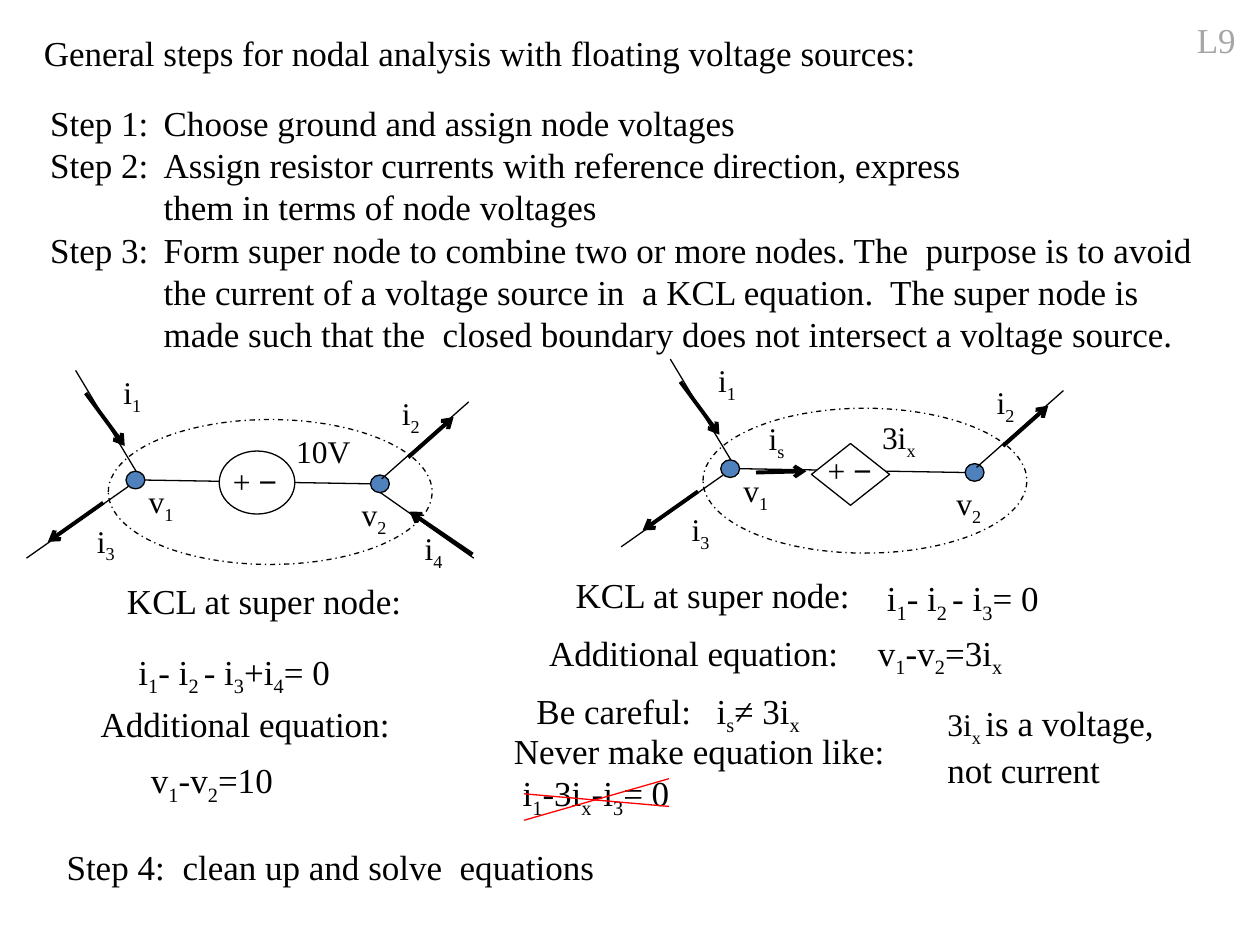
from lxml import etree
from pptx import Presentation
from pptx import util as u
from pptx.dml.color import RGBColor
from pptx.enum import dml, shapes, text
from pptx.oxml import ns

Inches = u.Inches
COLORS = {"ink": "000000", "tag": "A6A6A6", "node": "4F81BD",
          "paper": "FFFFFF", "strike": "FF0000"}
SERIF, SANS = "Times New Roman", "Arial"
LABEL = {"size": 18, "inset": 0.16}


def rgb(name):
    return RGBColor.from_string(COLORS[name])


def add_spans(para, wording, size=20, font=SERIF, color="ink"):
    """Add text to a paragraph; parts in [brackets] become subscripts."""
    for index, piece in enumerate(wording.replace("]", "[").split("[")):
        if not piece:
            continue
        span = para.add_run()
        span.text = piece
        span.font.size = u.Pt(size)
        span.font.name = font
        span.font.color.rgb = rgb(color)
        if index % 2:
            span.font._element.set("baseline", "-25000")


def write(parent, wording, left, top, width, height=0.44, inset=0.1, hang=0, **style):
    """Add a text box, one paragraph a line; hang is the indent after a tab."""
    box = parent.add_textbox(Inches(left), Inches(top), Inches(width), Inches(height))
    frame = box.text_frame
    frame.word_wrap = True
    frame.auto_size = text.MSO_AUTO_SIZE.NONE
    frame.margin_left, frame.margin_right = Inches(inset), 0
    for index, line in enumerate(wording.split("\n")):
        para = frame.add_paragraph() if index else frame.paragraphs[0]
        if hang:
            layout = para._p.get_or_add_pPr()
            layout.set("marL", str(Inches(hang)))
            layout.set("indent", str(-Inches(hang)))
        for row, part in enumerate(line.split("\v")):
            if row:
                para.add_line_break()
            add_spans(para, part, **style)
    return frame


def draw_line(parent, start, end, color="ink", weight=0.75, arrow=False):
    line = parent.add_connector(shapes.MSO_CONNECTOR.STRAIGHT,
                                *(Inches(value) for value in (*start, *end)))
    line.line.color.rgb = rgb(color)
    line.line.width = u.Pt(weight)
    if arrow:
        etree.SubElement(line.line._get_or_add_ln(), ns.qn("a:tailEnd"), type="arrow")
    etree.SubElement(line._element.spPr, ns.qn("a:effectLst"))


def draw_shape(parent, kind, left, top, width, height, fill=None, dash=None):
    shape = parent.add_shape(kind, Inches(left), Inches(top), Inches(width), Inches(height))
    shape.shadow.inherit = False
    if fill:
        shape.fill.solid()
        shape.fill.fore_color.rgb = rgb(fill)
    else:
        shape.fill.background()
    shape.line.color.rgb = rgb("ink")
    shape.line.width = u.Pt(0.75)
    if dash:
        shape.line.dash_style = dash


def draw_super_node(page, left, top, source, labels, leads, arrows):
    """Draw two nodes, the source between them and the closed boundary.

    source is (shape, left, top, width, height); every place is relative to
    the boundary's corner.
    """
    parent = page.shapes.add_group_shape().shapes
    oval = shapes.MSO_SHAPE.OVAL

    def at(point):
        return left + point[0], top + point[1]

    draw_line(parent, at((0.29, 0.48)), at((2.08, 0.51)))
    for node in ((0.14, 0.41), (2.08, 0.44)):
        draw_shape(parent, oval, *at(node), 0.15, 0.14, fill="node")
    kind, x, y, width, height = source
    draw_shape(parent, kind, *at((x, y)), width, height, fill="paper")
    polarity = write(parent, "+ ", *at((0.89, 0.29)), 0.62, 0.47, size=18)
    add_spans(polarity.paragraphs[0], "−", size=18, font=SANS)

    shared_leads = [((0.16, 0.53), (-0.65, 1.1)), ((0.22, 0.41), (-0.26, -0.39)),
                    ((2.17, 0.47), (2.86, -0.14))]
    shared_arrows = [((-0.18, -0.21), (0.13, 0.21)), ((-0.04, 0.66), (-0.48, 0.97)),
                     ((2.38, 0.3), (2.74, -0.02))]
    shared_labels = [("i[1]", -0.04, -0.42), ("i[3]", -0.25, 0.76), ("i[2]", 2.17, -0.25),
                     ("v[1]", 0.16, 0.45), ("v[2]", 1.85, 0.55)]
    for start, end in shared_leads + leads:
        draw_line(parent, at(start), at(end))
    for start, end in shared_arrows + arrows:
        draw_line(parent, at(start), at(end), weight=2.25, arrow=True)
    for wording, x, y in shared_labels + labels:
        width = 0.81 if wording == "10V" else 0.62
        write(parent, wording, *at((x, y)), width, 0.47, **LABEL)
    draw_shape(parent, oval, left, top, 2.57, 1.15, dash=dml.MSO_LINE.DASH_DOT)


def write_steps(page, left, top):
    parent = page.shapes
    write(parent, "General steps for nodal analysis with floating voltage sources:",
          left, top, 7.17)
    write(parent,
          "Step 1:\tChoose ground and assign node voltages\n"
          "Step 2:\tAssign resistor currents with reference direction, express"
          "\vthem in terms of node voltages\n"
          "Step 3:\tForm super node to combine two or more nodes. The  purpose is to avoid"
          "\vthe current of a voltage source in  a KCL equation.  The super node is"
          "\vmade such that the  closed boundary does not intersect a voltage source.",
          left + 0.05, top + 0.56, 9.42, 2.12, hang=0.9)
    write(parent, "Step 4:\tclean up and solve  equations",
          left + 0.18, top + 6.46, 4.49, hang=0.92)


def write_independent_case(page, left, top):
    for wording, x, y, width in (("KCL at super node:", 0.21, 0, 2.47),
                                 ("i[1]- i[2 ]- i[3]+i[4]= 0", 0.3, 0.56, 1.78),
                                 ("Additional equation:", 0, 0.98, 2.51),
                                 ("v[1]-v[2]=10", 0.4, 1.42, 1.2)):
        write(page.shapes, wording, left + x, top + y, width)


def write_dependent_case(page, left, top):
    parent = page.shapes
    for wording, x, y, width in (("KCL at super node:", 0.49, 0, 2.47),
                                 ("i[1]- i[2 ]- i[3]= 0", 2.96, 0.03, 1.45),
                                 ("Additional equation:", 0.28, 0.46, 2.51),
                                 ("v[1]-v[2]=3i[x]", 2.89, 0.46, 1.23)):
        write(parent, wording, left + x, top + y, width)
    write(parent, "Be careful:\ti[s]≠ 3i[x]", left + 0.18, top + 0.92, 2.33, hang=1.43)
    warning = write(parent, "Never make equation like:\ni[1]-3i[x]-i[3]= 0",
                    left, top + 1.24, 3.16, 0.77)
    warning.paragraphs[1]._p.get_or_add_pPr().set("marL", str(Inches(0.07)))
    remark = write(parent, "3i[x ]", left + 3.44, top + 1.02, 1.96, 0.77, size=18)
    add_spans(remark.paragraphs[0], "is a voltage,")
    add_spans(remark.add_paragraph(), "not current")
    for start_y, end_y in ((1.8, 1.9), (2.01, 1.68)):
        draw_line(parent, (left + 0.18, top + start_y), (left + 1.33, top + end_y),
                  color="strike")


def main():
    deck = Presentation()
    deck.slide_width, deck.slide_height = Inches(10), Inches(7.5)
    page = deck.slides.add_slide(deck.slide_layouts[6])
    write(page.shapes, "L9", 9.4, 0.1, 0.51, color="tag")
    write_steps(page, 0.25, 0.2)
    draw_super_node(page, 0.86, 3.33,
                    source=(shapes.MSO_SHAPE.OVAL, 0.88, 0.25, 0.6, 0.5),
                    labels=[("10V", 1.33, 0.05), ("i[4]", 2.35, 0.82)],
                    leads=[((2.16, 0.58), (2.9, 1.1))],
                    arrows=[((2.89, 1.07), (2.39, 0.73))])
    draw_super_node(page, 5.58, 3.24,
                    source=(shapes.MSO_SHAPE.DIAMOND, 0.86, 0.28, 0.62, 0.49),
                    labels=[("3i[x]", 1.26, 0.03), ("i[s]", 0.36, 0.04)],
                    leads=[],
                    arrows=[((0.42, 0.51), (0.82, 0.5))])
    write_independent_case(page, 0.7, 4.55)
    write_dependent_case(page, 3.98, 4.5)
    deck.save("out.pptx")


if __name__ == "__main__":
    main()
